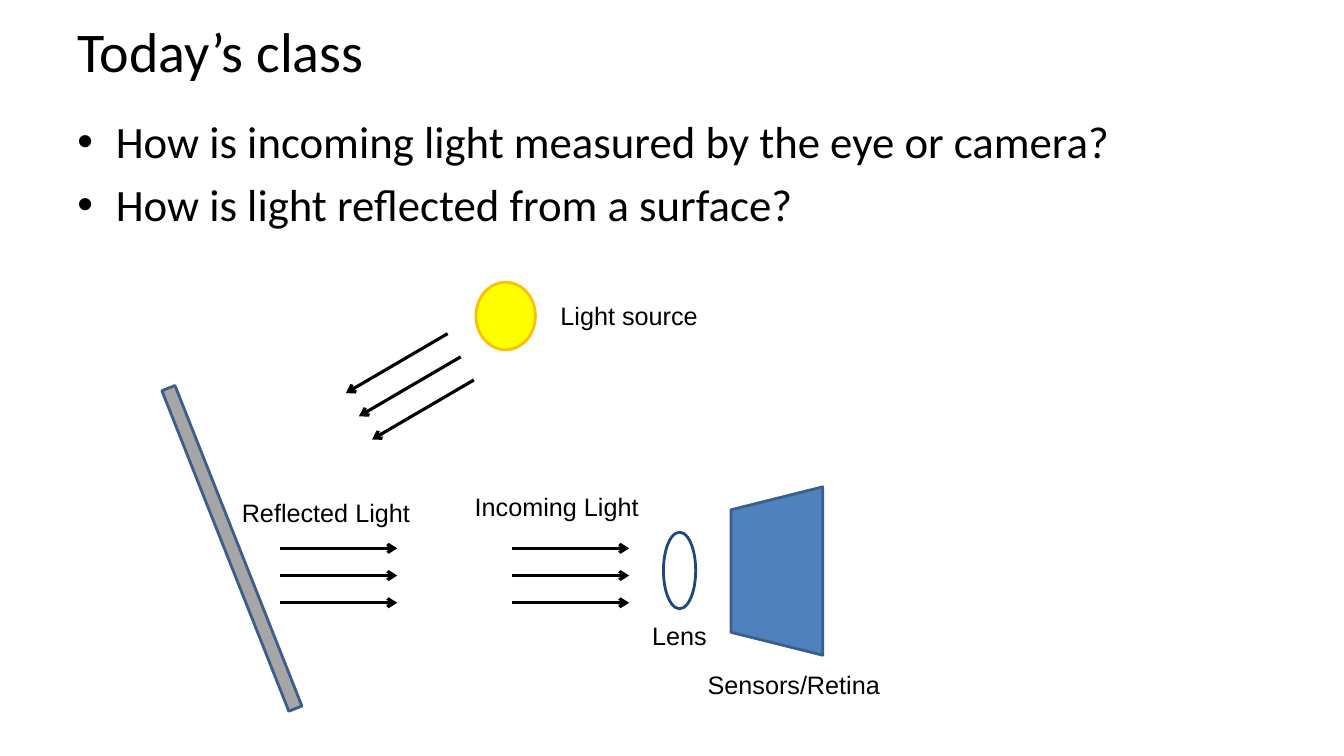
from dataclasses import dataclass
from typing import Any, Optional

import pptx
import pptx.dml.color
import pptx.enum.shapes
import pptx.enum.text
import pptx.oxml
import pptx.oxml.ns
import pptx.util
from lxml import etree

Inches = pptx.util.Inches
Pt = pptx.util.Pt
qn = pptx.oxml.ns.qn
Shape = pptx.enum.shapes.MSO_SHAPE

BLACK = "000000"
RAYS_PER_BUNDLE = 3


@dataclass
class Part:
    kind: Any
    left: float
    top: float
    width: float
    height: float
    outline: str
    fill: Optional[str] = None
    rotation: float = 0


@dataclass
class Label:
    text: str
    left: float
    top: float
    width: float


@dataclass
class RayBundle:
    """Parallel arrows: first start point, run of each arrow, step to the next."""
    start: tuple[float, float]
    run: tuple[float, float]
    step: tuple[float, float]


PARTS = [
    Part(Shape.TRAPEZOID, 6.87, 5.21, 1.67, 0.91, "3A5F8C", "4F81BD", 270),  # sensor
    Part(Shape.OVAL, 6.58, 5.28, 0.32, 0.76, "1F497D"),  # lens
    Part(Shape.RECTANGLE, 2.23, 3.73, 0.14, 3.42, "3A5F8C", "A6A6A6", 338.4),  # surface
    Part(Shape.OVAL, 4.72, 2.8, 0.59, 0.67, "FFC000", "FFFF00"),  # light source
]
LABELS = [
    Label("Light source", 5.46, 2.93, 1.58),
    Label("Sensors/Retina", 6.92, 6.59, 1.93),
    Label("Lens", 6.37, 6.1, 0.75),
    Label("Reflected Light", 2.3, 4.88, 1.88),
    Label("Incoming Light", 4.61, 4.83, 1.84),
]
BUNDLES = [
    RayBundle((4.44, 3.31), (-1.01, 0.59), (0.13, 0.23)),  # from the source
    RayBundle((2.78, 5.44), (1.16, 0), (0, 0.27)),  # reflected
    RayBundle((5.08, 5.44), (1.16, 0), (0, 0.27)),  # incoming
]
QUESTIONS = [
    "How is incoming light measured by the eye or camera?",
    "How is light reflected from a surface?",
]


def color(value: str) -> pptx.dml.color.RGBColor:
    return pptx.dml.color.RGBColor.from_string(value)


def apply(target: Any, formats: dict[str, Any]) -> None:
    for attribute, value in formats.items():
        setattr(target, attribute, value)


def add_text(slide: Any, box: tuple[float, ...], lines: list[str], font: str,
             size: float, frame_formats: dict[str, Any]) -> Any:
    frame = slide.shapes.add_textbox(*map(Inches, box)).text_frame
    apply(frame, frame_formats)
    frame.text = "\n".join(lines)
    for paragraph in frame.paragraphs:
        apply(paragraph.font, {"name": font, "size": Pt(size)})
        paragraph.font.color.rgb = color(BLACK)
    return frame


def add_bullets(frame: Any) -> None:
    for paragraph in frame.paragraphs:
        paragraph.space_before = Pt(6.4)
        properties = paragraph._p.get_or_add_pPr()
        properties.set("marL", str(Inches(0.38)))
        properties.set("indent", str(Inches(-0.38)))
        bullet_font = etree.Element(qn("a:buFont"), typeface="Arial")
        bullet = etree.Element(qn("a:buChar"), char="•")
        defaults = properties.find(qn("a:defRPr"))
        defaults.addprevious(bullet_font)
        defaults.addprevious(bullet)


def add_part(slide: Any, part: Part) -> None:
    shape = slide.shapes.add_shape(
        part.kind, *map(Inches, (part.left, part.top, part.width, part.height)))
    shape.shadow.inherit = False
    shape.rotation = part.rotation
    if part.fill:
        shape.fill.solid()
        shape.fill.fore_color.rgb = color(part.fill)
    else:
        shape.fill.background()
    shape.line.color.rgb = color(part.outline)
    shape.line.width = Pt(2)


def add_ray(shapes: Any, start: tuple[float, float], end: tuple[float, float]) -> None:
    ray = shapes.add_connector(pptx.enum.shapes.MSO_CONNECTOR.STRAIGHT,
                               *map(Inches, (*start, *end)))
    ray.line.color.rgb = color(BLACK)
    ray.line.width = Pt(2.25)
    properties = ray.element.spPr
    etree.SubElement(properties.find(qn("a:ln")), qn("a:tailEnd"), type="arrow")
    etree.SubElement(properties, qn("a:effectLst"))


def add_bundle(slide: Any, bundle: RayBundle) -> None:
    rays = slide.shapes.add_group_shape().shapes
    for index in range(RAYS_PER_BUNDLE):
        x = bundle.start[0] + index * bundle.step[0]
        y = bundle.start[1] + index * bundle.step[1]
        add_ray(rays, (x, y), (x + bundle.run[0], y + bundle.run[1]))


def main() -> None:
    deck = pptx.Presentation()
    apply(deck, {"slide_width": Inches(13.33), "slide_height": Inches(7.5)})
    slide = deck.slides.add_slide(deck.slide_layouts[6])

    add_text(slide, (0.67, 0, 12, 1), ["Today’s class"], "Calibri", 40,
             {"word_wrap": True,
              "vertical_anchor": pptx.enum.text.MSO_ANCHOR.MIDDLE})
    questions = add_text(slide, (0.67, 1.08, 12, 5.62), QUESTIONS, "Calibri", 32,
                         {"word_wrap": True})
    add_bullets(questions)

    for part in PARTS:
        add_part(slide, part)
    for bundle in BUNDLES:
        add_bundle(slide, bundle)
    for label in LABELS:
        add_text(slide, (label.left, label.top, label.width, 0.4), [label.text],
                 "Arial", 18,
                 {"word_wrap": False,
                  "auto_size": pptx.enum.text.MSO_AUTO_SIZE.SHAPE_TO_FIT_TEXT})

    deck.save("out.pptx")


if __name__ == "__main__":
    main()
